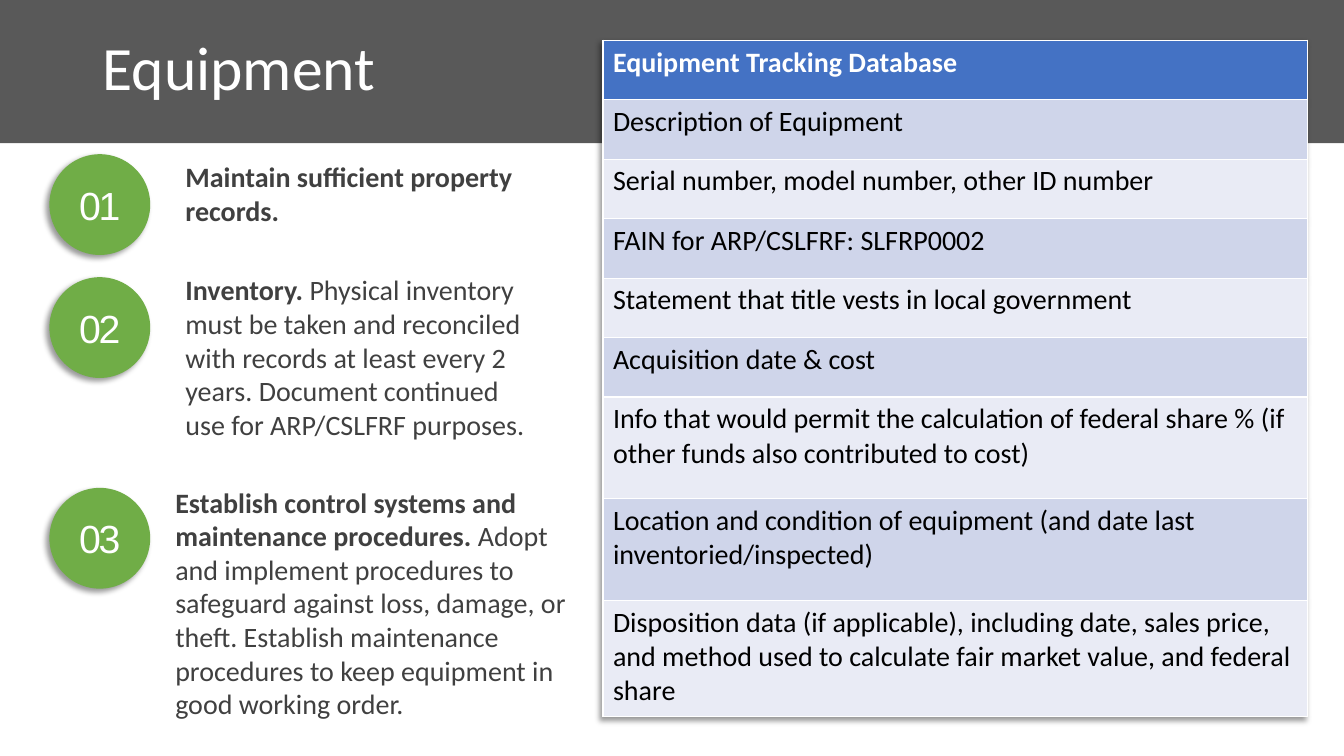
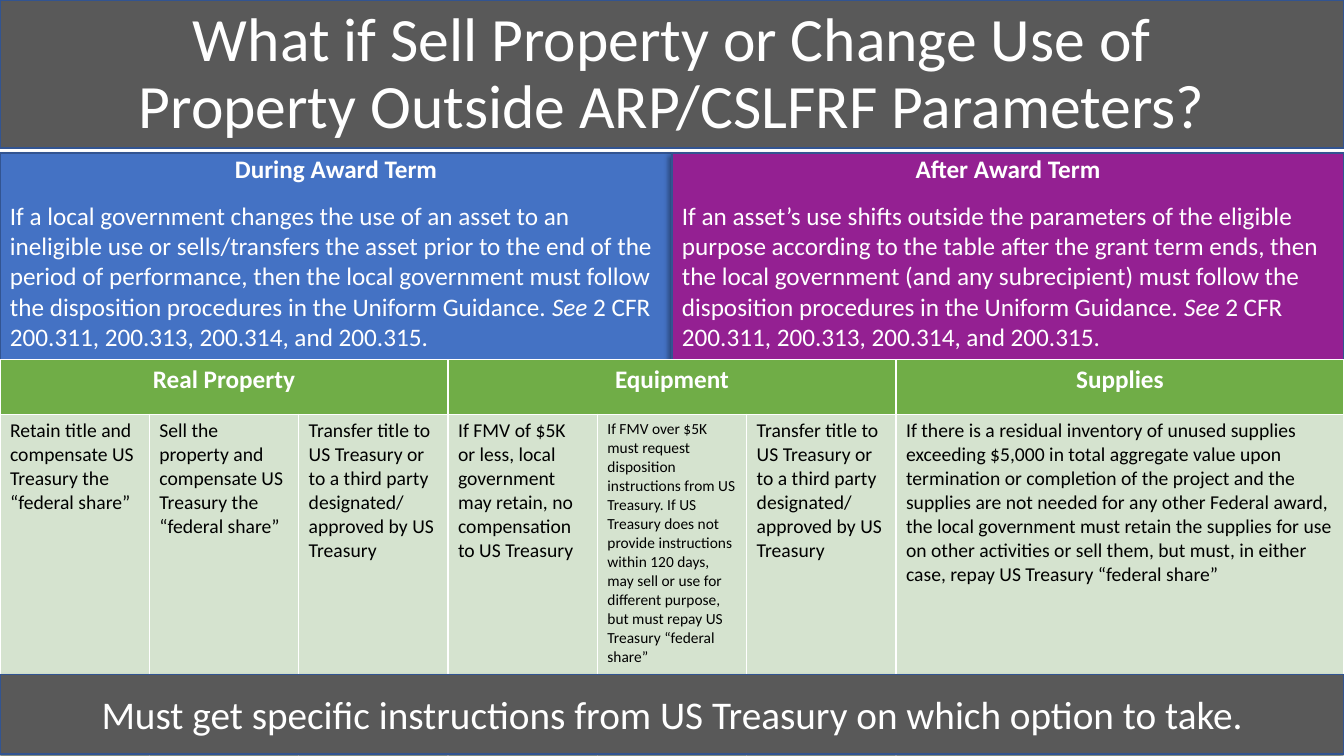
"""Build two slides on tracking and disposing of grant-funded property."""
from lxml import etree
from pptx import Presentation
from pptx.dml.color import RGBColor
from pptx.enum.shapes import MSO_SHAPE
from pptx.enum.text import MSO_ANCHOR, PP_ALIGN
from pptx.oxml.ns import qn
from pptx.util import Inches, Pt

RECT, OVAL = MSO_SHAPE.RECTANGLE, MSO_SHAPE.OVAL
LEFT, CENTER = PP_ALIGN.LEFT, PP_ALIGN.CENTER
TOP, MIDDLE = MSO_ANCHOR.TOP, MSO_ANCHOR.MIDDLE
WIDTH, HEIGHT = 13.33, 7.5
COLORS = {
    "band": "595959", "outline": "325491", "white": "FFFFFF", "black": "000000",
    "text": "404040", "blue": "4472C4", "purple": "942092", "green": "70AD47",
    "blue_mid": "CFD5EA", "blue_pale": "E9EBF5", "green_pale": "D5E3CF",
}

DUTIES = [
    {"top": 1.53, "text_box": (1.74, 1.42, 3.69, 1),
     "spans": [("Maintain sufficient property records.", "b")]},
    {"top": 2.75, "text_box": (1.74, 3.04, 3.69, 1),
     "spans": [("Inventory. ", "b"),
               ("Physical inventory must be taken and reconciled with records at least "
                "every 2 years. Document continued use for ARP/CSLFRF purposes.", "")]},
    {"top": 4.84, "text_box": (1.64, 5.48, 4.2, 1),
     "spans": [("Establish control systems and maintenance procedures. ", "b"),
               ("Adopt and implement procedures to safeguard against loss, damage, or theft. "
                "Establish maintenance procedures to keep equipment in good working order.", "")]},
]
DATABASE = [
    ("Equipment Tracking Database", 0.59),
    ("Description of Equipment", 0.59),
    ("Serial number, model number, other ID number", 0.59),
    ("FAIN for ARP/CSLFRF: SLFRP0002", 0.59),
    ("Statement that title vests in local government", 0.59),
    ("Acquisition date & cost", 0.59),
    ("Info that would permit the calculation of federal share % "
     "(if other funds also contributed to cost)", 1.01),
    ("Location and condition of equipment (and date last inventoried/inspected)", 1.01),
    ("Disposition data (if applicable), including date, sales price, and method used "
     "to calculate fair market value, and federal share", 1.15),
]
TERMS = [
    ("During Award Term", "blue",
     "If a local government changes the use of an asset to an ineligible use or "
     "sells/transfers the asset prior to the end of the period of performance, then the "
     "local government must follow the disposition procedures in the Uniform Guidance. "),
    ("After Award Term", "purple",
     "If an asset’s use shifts outside the parameters of the eligible purpose according to "
     "the table after the grant term ends, then the local government (and any subrecipient) "
     "must follow the disposition procedures in the Uniform Guidance. "),
]
CITATION = [("See ", "i"), ("2 CFR 200.311, 200.313, 200.314, and 200.315.", "")]
TRANSFER = ("Transfer title to US Treasury or to a third party designated/ "
            "approved by US Treasury", 14)
OPTIONS = {
    "Real Property": [
        ("Retain title and compensate US Treasury the “federal share”", 14),
        ("Sell the property and compensate US Treasury the “federal share”", 14),
        TRANSFER,
    ],
    "Equipment": [
        ("If FMV of $5K or less, local government may retain, "
         "no compensation to US Treasury", 14),
        ("If FMV over $5K must request disposition instructions from US Treasury. If US "
         "Treasury does not provide instructions within 120 days, may sell or use for "
         "different purpose, but must repay US Treasury “federal share”", 11),
        TRANSFER,
    ],
    "Supplies": [
        ("If there is a residual inventory of unused supplies exceeding $5,000 in total "
         "aggregate value upon termination or completion of the project and the supplies are "
         "not needed for any other Federal award, the local government must retain the "
         "supplies for use on other activities or sell them, but must, in either case, "
         "repay US Treasury “federal share”", 14),
    ],
}


def rgb(name):
    return RGBColor.from_string(COLORS[name])


def lengths(box):
    return [Inches(value) for value in box]


def write(para, spans, size, color="white", align=LEFT, font="Calibri"):
    """Fill a paragraph with (text, style) spans, styles being b, i or empty."""
    para.alignment = align
    para.font.name, para.font.size = font, Pt(size)
    para.font.color.rgb = rgb(color)
    for text, style in spans:
        span = para.add_run()
        span.text = text
        span.font.bold = style == "b"
        span.font.italic = style == "i"


def add_shadow(effects):
    """Put a soft shadow to the lower left into an effect list."""
    shadow = etree.SubElement(effects, qn("a:outerShdw"), blurRad=str(Pt(4)),
                              dist=str(Pt(3)), dir="8100000", algn="tr", rotWithShape="0")
    color = etree.SubElement(shadow, qn("a:srgbClr"), val=COLORS["black"])
    etree.SubElement(color, qn("a:alpha"), val="40000")


def add_block(page, kind, box, fill, outlined=False, shadowed=False):
    shape = page.shapes.add_shape(kind, *lengths(box))
    shape.fill.solid()
    shape.fill.fore_color.rgb = rgb(fill)
    if outlined:
        shape.line.color.rgb = rgb("outline")
        shape.line.width = Pt(1)
    else:
        shape.line.fill.background()
    shape.shadow.inherit = False
    if shadowed:
        add_shadow(shape.element.spPr.find(qn("a:effectLst")))
    return shape


def add_text(page, box, spans, size, color="white", align=LEFT):
    frame = page.shapes.add_textbox(*lengths(box)).text_frame
    frame.word_wrap = True
    frame.vertical_anchor = MIDDLE
    para = frame.paragraphs[0]
    write(para, spans, size, color, align)
    return para


def add_header(page, title, height, title_top, align=LEFT, outlined=False):
    add_block(page, RECT, (0, 0, WIDTH, height), "band", outlined)
    para = add_text(page, (0.92, title_top, 11.5, 1.45), [(title, "")], 44, align=align)
    para.line_spacing = 0.9


def add_grid(page, left, top, columns, rows):
    box = (left, top, sum(columns), sum(rows))
    table = page.shapes.add_table(len(rows), len(columns), *lengths(box)).table
    table.horz_banding = False
    for column, width in zip(table.columns, columns):
        column.width = Inches(width)
    for row, height in zip(table.rows, rows):
        row.height = Inches(height)
    return table


def fill_cell(cell, text, size, fill, header=False, align=LEFT):
    cell.fill.solid()
    cell.fill.fore_color.rgb = rgb(fill)
    write(cell.text_frame.paragraphs[0], [(text, "b" if header else "")], size,
          "white" if header else "black", align)


def build_equipment(page):
    add_header(page, "Equipment", 1.42, -0.03)
    table = add_grid(page, 5.98, 0.4, [6.99], [height for _, height in DATABASE])
    effects = etree.Element(qn("a:effectLst"))
    add_shadow(effects)
    table._tbl.tblPr.insert(0, effects)
    for index, (text, _) in enumerate(DATABASE):
        band = "blue_mid" if index % 2 else "blue_pale"
        fill_cell(table.cell(index, 0), text, 20, band if index else "blue", index == 0)
    for number, duty in enumerate(DUTIES, 1):
        circle = add_block(page, OVAL, (0.49, duty["top"], 1, 1), "green", shadowed=True)
        frame = circle.text_frame
        frame.margin_left = frame.margin_right = 0
        para = frame.paragraphs[0]
        write(para, [(f"{number:02}", "")], 28, align=CENTER, font="Arial")
        para.runs[0].font._element.set("spc", "-150")
        add_text(page, duty["text_box"], duty["spans"], 20, "text")


def build_disposition(page):
    add_header(page, "What if Sell Property or Change Use of Property Outside "
               "ARP/CSLFRF Parameters?", 1.47, 0.02, CENTER, outlined=True)
    half = WIDTH / len(TERMS)
    for index, (heading, fill, body) in enumerate(TERMS):
        panel = add_block(page, RECT, (index * half, 1.52, half, 2.23), fill, True, True)
        frame = panel.text_frame
        frame.vertical_anchor = TOP
        frame.margin_top = 0
        para = frame.paragraphs[0]
        write(para, [(heading, "b")], 18, align=CENTER)
        para.space_after = Pt(12)
        write(frame.add_paragraph(), [(body, ""), *CITATION], 18)

    third = WIDTH / len(OPTIONS)
    columns = [third / len(cells) for cells in OPTIONS.values() for _ in cells]
    table = add_grid(page, 0, 3.57, columns, [0.54, 3.4])
    start = 0
    for heading, cells in OPTIONS.items():
        head = table.cell(0, start)
        if len(cells) > 1:
            head.merge(table.cell(0, start + len(cells) - 1))
        fill_cell(head, heading, 18, "green", True, CENTER)
        for offset, (text, size) in enumerate(cells):
            fill_cell(table.cell(1, start + offset), text, size, "green_pale")
        start += len(cells)

    footer = add_block(page, RECT, (0, 6.69, WIDTH, 0.79), "band", True, True)
    write(footer.text_frame.paragraphs[0],
          [("Must get specific instructions from US Treasury on which option to take.", "")],
          28, align=CENTER)


def main():
    deck = Presentation()
    deck.slide_width, deck.slide_height = lengths((WIDTH, HEIGHT))
    for build in (build_equipment, build_disposition):
        build(deck.slides.add_slide(deck.slide_layouts[6]))
    deck.save("out.pptx")


if __name__ == "__main__":
    main()
